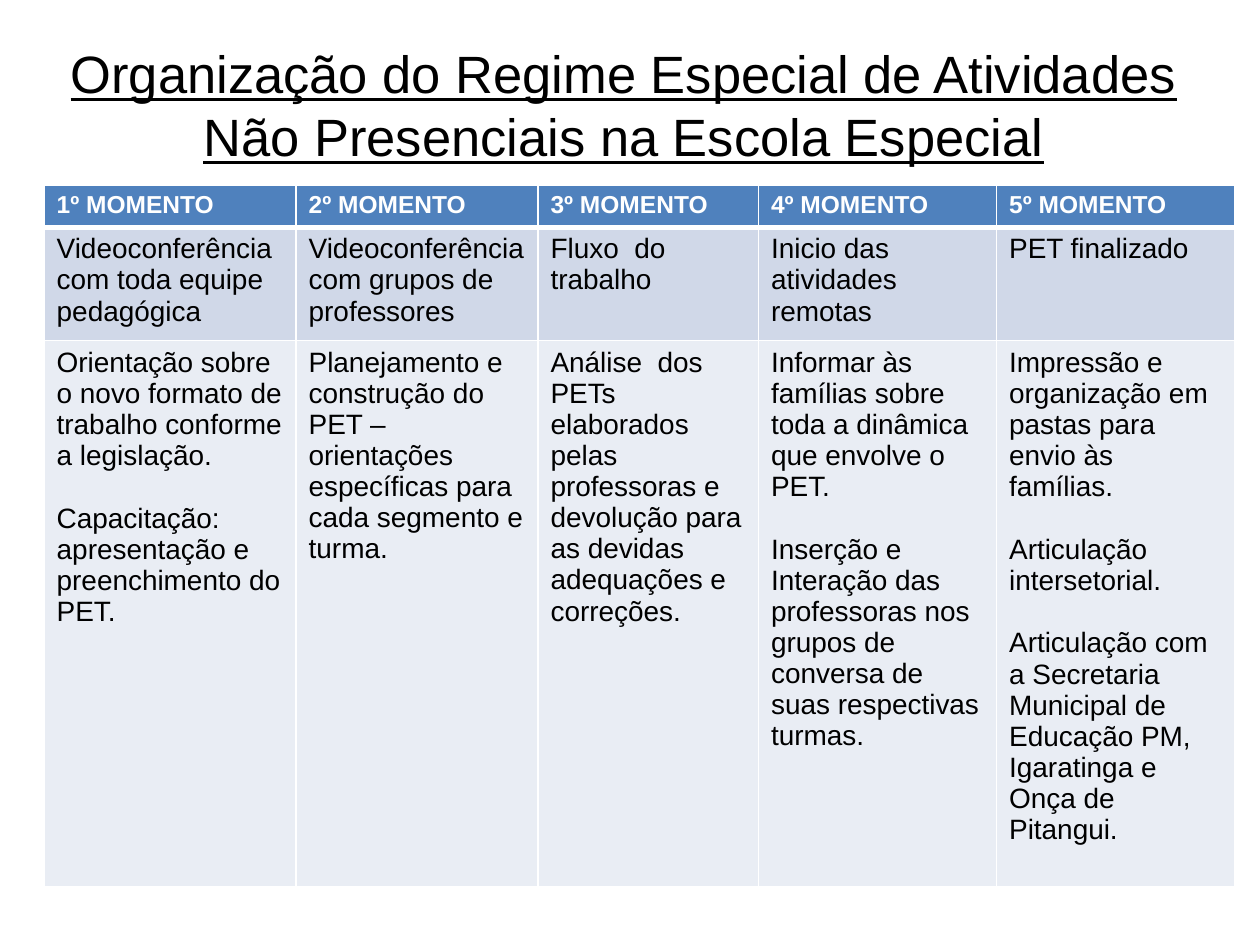
from lxml import etree
from pptx import Presentation
from pptx.dml.color import RGBColor
from pptx.enum import text
from pptx.oxml.ns import qn
from pptx.util import Inches, Pt

BLACK = RGBColor(0x00, 0x00, 0x00)
WHITE = RGBColor(0xFF, 0xFF, 0xFF)
BLUE = RGBColor(0x4F, 0x81, 0xBD)
PALE_BLUE = RGBColor(0xD0, 0xD8, 0xE8)
PALE_GREY = RGBColor(0xE9, 0xED, 0xF4)

TITLE = "Organização do Regime Especial de Atividades Não Presenciais na Escola Especial"
TITLE_FONT = {"name": "Arial", "size": Pt(30), "underline": True}
HEAD_FONT = {"name": "Arial", "size": Pt(14), "bold": True}
BODY_FONT = {"name": "Arial", "size": Pt(16), "bold": False}

COL_WIDTHS = [2, 1.92, 1.75, 1.89, 1.89]
ROW_HEIGHTS = [0.32, 0.84, 4.04]
ROW_STYLES = [(BLUE, WHITE, HEAD_FONT), (PALE_BLUE, BLACK, BODY_FONT),
              (PALE_GREY, BLACK, BODY_FONT)]

# Each moment: topic, then the paragraphs that detail it
MOMENTS = [
    ("Videoconferência com toda equipe pedagógica",
     ["Orientação sobre o novo formato de trabalho conforme a legislação.",
      "Capacitação: apresentação e preenchimento do PET."]),
    ("Videoconferência com grupos de professores",
     ["Planejamento e construção do PET – orientações específicas para cada "
      "segmento e turma."]),
    ("Fluxo  do trabalho",
     ["Análise  dos PETs elaborados pelas professoras e devolução para as "
      "devidas adequações e correções."]),
    ("Inicio das atividades remotas",
     ["Informar às famílias sobre toda a dinâmica que envolve o PET.",
      "Inserção e Interação das professoras nos grupos de conversa de suas "
      "respectivas turmas."]),
    ("PET finalizado",
     ["Impressão e organização em pastas para envio às famílias.",
      "Articulação intersetorial.",
      "Articulação com a Secretaria Municipal de Educação PM, Igaratinga e "
      "Onça de Pitangui."]),
]


def add_run(p, words, fmt, color):
    r = p.add_run()
    r.text = words
    for key, value in fmt.items():
        setattr(r.font, key, value)
    r.font.color.rgb = color


def add_title(slide):
    sp = slide.shapes.add_textbox(Inches(0.2), Inches(0.36), Inches(9.5), Inches(0.93))
    tf = sp.text_frame
    tf.word_wrap = True
    tf.vertical_anchor = text.MSO_ANCHOR.MIDDLE
    p = tf.paragraphs[0]
    p.alignment = text.PP_ALIGN.CENTER
    add_run(p, TITLE, TITLE_FONT, BLACK)


def set_borders(cell, widths):
    """Draw white borders; widths maps a side (L, R, T, B) to points."""
    tc_pr = cell._tc.get_or_add_tcPr()
    for i, (side, width) in enumerate(widths.items()):
        ln = etree.Element(qn(f"a:ln{side}"), w=str(Pt(width)))
        fill = etree.SubElement(ln, qn("a:solidFill"))
        etree.SubElement(fill, qn("a:srgbClr"), val=str(WHITE))
        tc_pr.insert(i, ln)


def fill_cell(cell, paragraphs, style):
    fill, color, fmt = style
    cell.fill.solid()
    cell.fill.fore_color.rgb = fill
    tf = cell.text_frame
    for i, words in enumerate(paragraphs):
        p = tf.add_paragraph() if i else tf.paragraphs[0]
        if i:
            p.space_before = Pt(18)
        add_run(p, words, fmt, color)


def add_moments_table(slide):
    table = slide.shapes.add_table(
        len(ROW_HEIGHTS), len(COL_WIDTHS), Inches(0.35), Inches(1.47),
        Inches(sum(COL_WIDTHS)), Inches(sum(ROW_HEIGHTS))).table
    for col, width in zip(table.columns, COL_WIDTHS):
        col.width = Inches(width)
    for row, height in zip(table.rows, ROW_HEIGHTS):
        row.height = Inches(height)

    for c, (topic, details) in enumerate(MOMENTS):
        column = [[f"{c + 1}º MOMENTO"], [topic], details]
        for r, paragraphs in enumerate(column):
            cell = table.cell(r, c)
            fill_cell(cell, paragraphs, ROW_STYLES[r])
            # Heavier rule between the heading and the body
            set_borders(cell, {"L": 1, "R": 1, "T": 3 if r == 1 else 1,
                               "B": 3 if r == 0 else 1})


def main():
    prs = Presentation()
    prs.slide_width, prs.slide_height = Inches(10), Inches(7.5)
    slide = prs.slides.add_slide(prs.slide_layouts[6])
    add_title(slide)
    add_moments_table(slide)
    prs.save("out.pptx")


if __name__ == "__main__":
    main()
